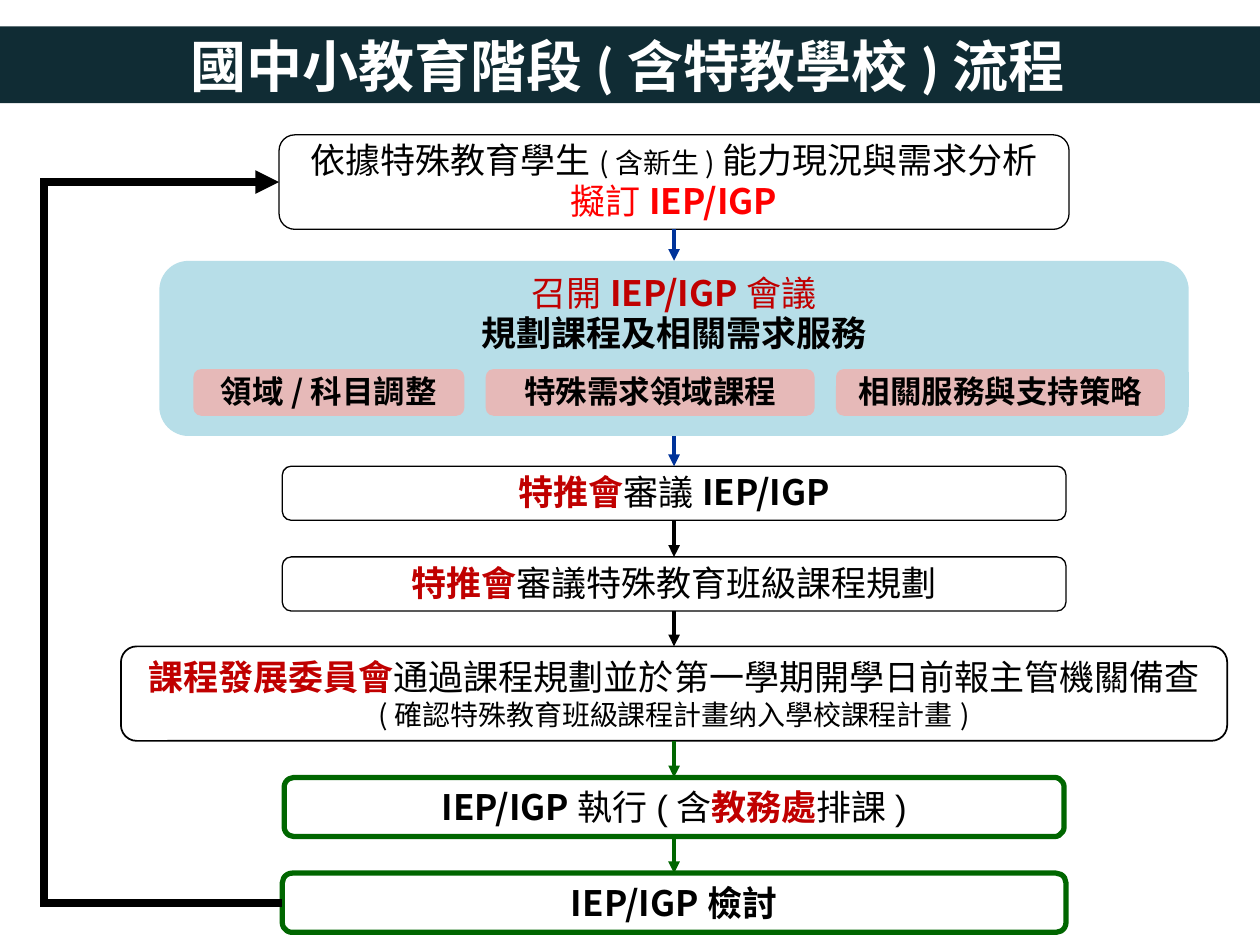
from lxml import etree
from pptx import Presentation
from pptx.dml.color import RGBColor
from pptx.enum.shapes import MSO_CONNECTOR, MSO_SHAPE
from pptx.enum.text import MSO_ANCHOR, MSO_AUTO_SIZE, PP_ALIGN
from pptx.oxml.ns import qn
from pptx.util import Inches, Pt

BLACK = RGBColor(0x00, 0x00, 0x00)
WHITE = RGBColor(0xFF, 0xFF, 0xFF)
NAVY = RGBColor(0x10, 0x2C, 0x34)
RED = RGBColor(0xFF, 0x00, 0x00)
WINE = RGBColor(0xC0, 0x00, 0x00)
BLUE = RGBColor(0x00, 0x33, 0x9A)
GREEN = RGBColor(0x00, 0x66, 0x00)
SKY = RGBColor(0xB7, 0xDE, 0xE8)
PINK = RGBColor(0xE6, 0xB9, 0xB8)

ROUND = MSO_SHAPE.FLOWCHART_ALTERNATE_PROCESS
LINE = MSO_CONNECTOR.STRAIGHT
CENTER = PP_ALIGN.CENTER
MIDDLE, TOP = MSO_ANCHOR.MIDDLE, MSO_ANCHOR.TOP
NOFIT = MSO_AUTO_SIZE.NONE
UP, LEFT, DOWN = 0, 1, 2

NOTO, ARIAL, KARLA = "Noto Sans CJK SC", "Arial", "Karla"
AXIS = 5.35
TIGHT = 0.96


def run(text, color=BLACK, bold=False, name=NOTO, size=20):
    """Describe a run of text and its font."""
    return text, color, dict(bold=bold, name=name, size=Pt(size))


def write(shape, paras, anchor=MIDDLE, space=None):
    """Fill a shape with centred paragraphs of runs."""
    frame = shape.text_frame
    look = dict(word_wrap=True, auto_size=NOFIT, vertical_anchor=anchor,
                margin_left=Inches(0.07), margin_right=Inches(0.07),
                margin_top=Inches(0.04), margin_bottom=Inches(0.04))
    for key, value in look.items():
        setattr(frame, key, value)
    for i, runs in enumerate(paras):
        para = frame.add_paragraph() if i else frame.paragraphs[0]
        para.alignment = CENTER
        para.line_spacing = space
        for item in runs:
            if item == "\n":
                para.add_line_break()
                continue
            text, color, font = item
            part = para.add_run()
            part.text = text
            part.font.color.rgb = color
            for key, value in font.items():
                setattr(part.font, key, value)


def paint(shape, fill, line=None, width=0.75):
    """Set the fill and outline of a shape."""
    shape.fill.solid()
    shape.fill.fore_color.rgb = fill
    if line is None:
        shape.line.fill.background()
    else:
        shape.line.color.rgb = line
        shape.line.width = Pt(width)


def title(slide, box, text):
    """Place the title band."""
    shape = slide.shapes.title
    for key, value in zip(("left", "top", "width", "height"), box):
        setattr(shape, key, Inches(value))
    paint(shape, NAVY)
    write(shape, [[run(text, WHITE, True, "Calibri", 32)]])


def panel(slide, box, paras, fill=WHITE, line=None, width=0.75,
          anchor=MIDDLE, space=TIGHT):
    """Place a rounded box with text."""
    shape = slide.shapes.add_shape(ROUND, *map(Inches, box))
    shape.shadow.inherit = False
    paint(shape, fill, line, width)
    write(shape, paras, anchor, space)
    return shape


def meeting(slide, box):
    """Place the meeting box with its row of topics."""
    left, top = box[:2]
    head = [[run("召開", WINE), run("IEP/IGP", WINE, True), run("會議", WINE)],
            [run("規劃課程及相關需求服務", bold=True)]]
    shape = panel(slide, box, head, SKY, anchor=TOP)
    x, gap = left + 0.27, 0.17
    for text, width in (("領域/科目調整", 2.15), ("特殊需求領域課程", 2.61),
                        ("相關服務與支持策略", 2.61)):
        panel(slide, (x, top + 0.86, width, 0.37),
              [[run(text, bold=True, size=18)]], PINK)
        x += width + gap
    return shape


def stroke(slide, start, end, color, width, arrow=False):
    """Draw a straight line between two points in inches."""
    line = slide.shapes.add_connector(LINE, *map(Inches, start + end))
    line.line.color.rgb = color
    line.line.width = Pt(width)
    etree.SubElement(line._element.spPr, qn("a:effectLst"))
    if arrow:
        tail = etree.SubElement(line.line._get_or_add_ln(), qn("a:tailEnd"))
        tail.set("type", "triangle")
    return line


def link(slide, above, below, color):
    """Join two steps with a downward arrow."""
    line = stroke(slide, (AXIS, 0), (AXIS, 1), color, 2.25, True)
    line.begin_connect(above, DOWN)
    line.end_connect(below, UP)


def loop(slide, first, last, x):
    """Lead from the last step back to the first along the left edge."""
    high, low = ((s.top + s.height / 2) / Inches(1) for s in (first, last))
    over = 0.03
    out = stroke(slide, (x, low), (x + 1, low), BLACK, 4.5)
    out.end_connect(last, LEFT)
    stroke(slide, (x, low + over), (x, high - over), BLACK, 4.5)
    back = stroke(slide, (x, high), (x + 1, high), BLACK, 4.5, True)
    back.end_connect(first, LEFT)


def flow(slide):
    """Place the steps on one axis and join them."""
    def mid(top, width, height):
        """Centre a box on the axis."""
        return AXIS - width / 2, top, width, height

    board = run("特推會", WINE, True, ARIAL)
    thin = dict(line=BLACK)
    plain = dict(line=BLACK, width=1, space=None)
    thick = dict(line=GREEN, width=3, space=None)
    draft = panel(slide, mid(1.07, 6.27, 0.75), [[
        run("依據特殊教育學生"), run("(含新生)", size=16),
        run("能力現況與需求分析"), "\n",
        run("擬訂", RED), run("IEP/IGP", RED, True)]], **thin)
    steps = [draft, meeting(slide, mid(2.07, 8.17, 1.39))]
    rest = (
        (mid(3.7, 6.22, 0.43), thin,
         [[board, run("審議", name=ARIAL), run("IEP/IGP", bold=True)]]),
        (mid(4.42, 6.22, 0.43), thin,
         [[board, run("審議特殊教育班級課程規劃", name=ARIAL)]]),
        (mid(5.13, 8.78, 0.75), plain,
         [[run("課程發展委員會", WINE, True, KARLA),
           run("通過課程規劃", name=KARLA),
           run("並於第一學期開學日前報主管機關備查")],
          [run("(確認特殊教育班級課程計畫纳入學校課程計畫)", size=16)]]),
        (mid(6.17, 6.19, 0.47), thick,
         [[run("IEP/IGP", bold=True), run("執行(含", name=ARIAL),
           run("教務處", WINE, True, ARIAL), run("排課)", name=ARIAL)]]),
        (mid(6.93, 6.22, 0.47), thick, [[run("IEP/IGP檢討", bold=True)]]),
    )
    steps += [panel(slide, box, paras, **style) for box, style, paras in rest]
    colors = (BLUE, BLUE, BLACK, BLACK, GREEN, GREEN)
    for above, below, color in zip(steps, steps[1:], colors):
        link(slide, above, below, color)
    loop(slide, steps[0], steps[-1], 0.35)


def main():
    """Build the slide and save it."""
    deck = Presentation()
    deck.slide_width, deck.slide_height = Inches(10), Inches(7.5)
    slide = deck.slides.add_slide(deck.slide_layouts[5])
    title(slide, (-0.04, 0.21, 10.04, 0.61), "國中小教育階段(含特教學校)流程")
    flow(slide)
    deck.save("out.pptx")


if __name__ == "__main__":
    main()
